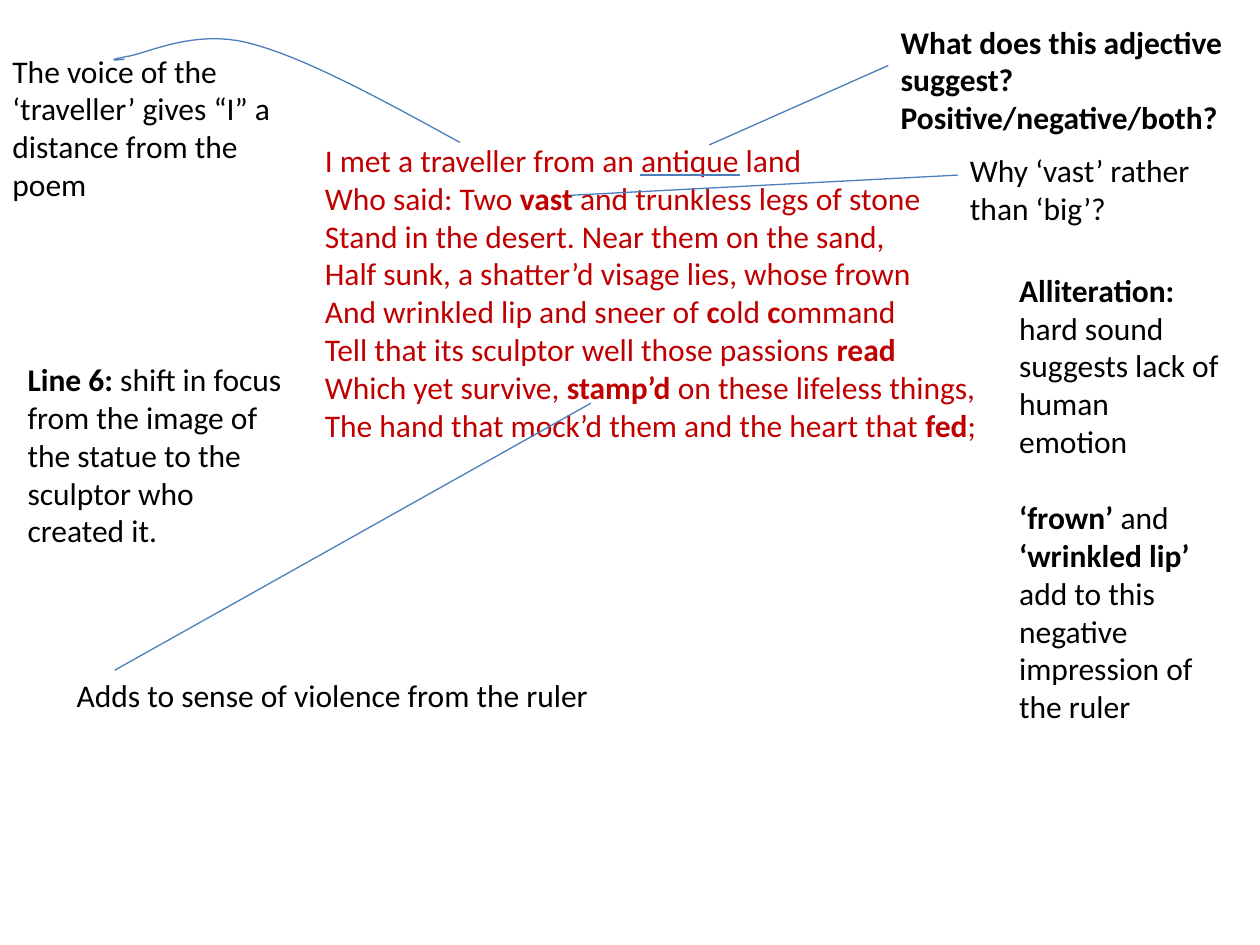
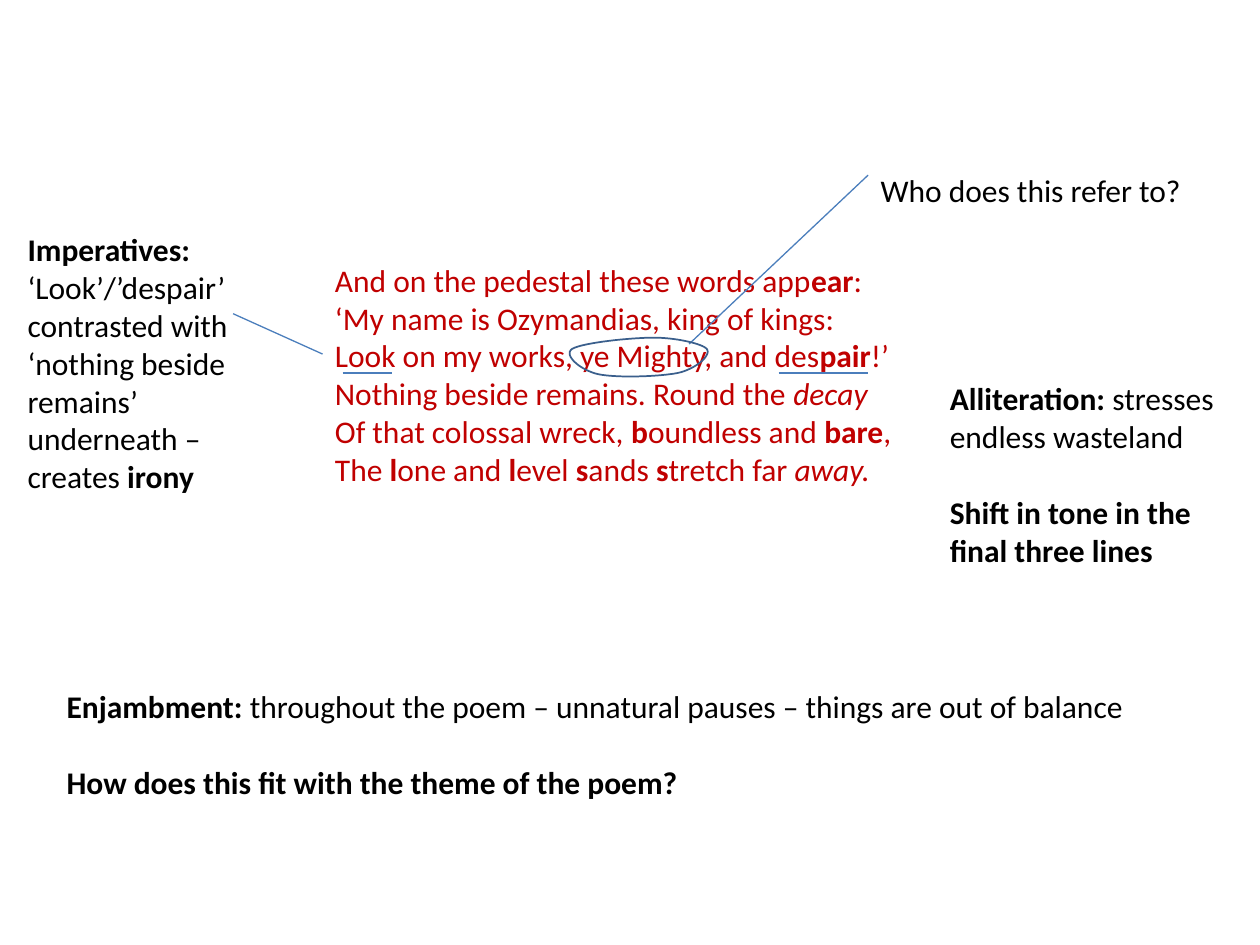
from dataclasses import dataclass

from lxml import etree
from pptx import Presentation
from pptx.dml.color import RGBColor
from pptx.enum.shapes import MSO_CONNECTOR
from pptx.enum.text import MSO_AUTO_SIZE
from pptx.oxml.ns import qn
from pptx.slide import Slide
from pptx.util import Emu, Pt

STRAIGHT = MSO_CONNECTOR.STRAIGHT
GROW = MSO_AUTO_SIZE.SHAPE_TO_FIT_TEXT

POEM_RED = RGBColor(0xC0, 0x00, 0x00)
NOTE_BLACK = RGBColor(0x00, 0x00, 0x00)
POINTER_BLUE = RGBColor(0x4B, 0x7E, 0xBC)
RING_BLUE = RGBColor(0x3A, 0x5F, 0x8C)

FONT = "Calibri"
TEXT_SIZE = Pt(18)
NOTE_GAP = Pt(22)
PX = 9144  # 100 px to the inch
CURVE_STEPS = 16

Point = tuple[float, float]


@dataclass(frozen=True)
class Passage:
    """Text whose *starred* parts are bold and _underscored_ parts italic."""
    left: int
    top: int
    width: int
    height: int
    paragraphs: tuple[str, ...]
    color: RGBColor = NOTE_BLACK
    wrap: bool = True
    gap: Pt = NOTE_GAP


@dataclass(frozen=True)
class Pointer:
    start: tuple[int, int]
    end: tuple[int, int]


@dataclass(frozen=True)
class Curve:
    """A start point followed by three points for each cubic segment."""
    points: tuple[tuple[int, int], ...]
    color: RGBColor = POINTER_BLUE
    weight: float = 0.75
    closed: bool = False


@dataclass(frozen=True)
class AnnotatedSlide:
    passages: tuple[Passage, ...]
    pointers: tuple[Pointer, ...]
    curve: Curve


def poem(left: int, top: int, width: int, height: int, *verses: str) -> Passage:
    return Passage(left, top, width, height, verses, POEM_RED, False, Pt(0))


OPENING = AnnotatedSlide(
    passages=(
        poem(248, 107, 543, 283,
             "I met a traveller from an antique land",
             "Who said: Two *vast* and trunkless legs of stone",
             "Stand in the desert. Near them on the sand,",
             "Half sunk, a shatter’d visage lies, whose frown",
             "And wrinkled lip and sneer of *c*old *c*ommand",
             "Tell that its sculptor well those passions *read*",
             "Which yet survive, *stamp’d* on these lifeless things,",
             "The hand that mock’d them and the heart that *fed*;"),
        Passage(705, 13, 276, 101,
                ("*What does this adjective suggest? Positive/negative/both?*",)),
        Passage(0, 36, 248, 131,
                ("The voice of the ‘traveller’ gives “I” a distance from the poem",)),
        Passage(760, 115, 220, 71, ("Why ‘vast’ rather than ‘big’?",)),
        Passage(799, 210, 181, 374,
                ("*Alliteration:* hard sound suggests lack of human emotion",
                 "*‘frown’ *and *‘wrinkled lip’* add to this negative "
                 "impression of the ruler")),
        Passage(12, 281, 228, 162,
                ("*Line 6:* shift in focus from the image of the statue "
                 "to the sculptor who created it.",)),
        Passage(51, 532, 431, 40,
                ("Adds to sense of violence from the ruler",), wrap=False),
    ),
    pointers=(
        Pointer((508, 139), (587, 139)),
        Pointer((563, 115), (705, 52)),
        Pointer((453, 155), (760, 139)),
        Pointer((469, 320), (91, 532)),
    ),
    curve=Curve(((365, 113), (303, 79), (241, 45), (197, 34), (153, 23),
                 (116, 43), (100, 45), (84, 48), (91, 48), (99, 47))),
)

ENDING = AnnotatedSlide(
    passages=(
        poem(256, 202, 465, 222,
             "And on the pedestal these words app*ear*:",
             "‘My name is Ozymandias, king of kings:",
             "Look on my works, ye Mighty, and des*pair*!’",
             "Nothing beside remains. Round the _decay_",
             "Of that colossal wreck, *b*oundless and *bare*,",
             "The *l*one and *l*evel *s*ands *s*tretch far _away._"),
        Passage(12, 178, 181, 222,
                ("*Imperatives: *‘Look’/’despair’ contrasted with ‘nothing "
                 "beside remains’ underneath – creates* irony*",)),
        Passage(744, 296, 244, 162,
                ("*Alliteration:* stresses endless wasteland",
                 "*Shift in tone in the final three lines*")),
        Passage(689, 131, 261, 40, ("Who does this refer to?",), wrap=False),
        Passage(43, 540, 869, 101,
                ("*Enjambment: *throughout the poem – unnatural pauses – "
                 "things are out of balance",
                 "*How does this fit with the theme of the poem?*"), wrap=False),
    ),
    pointers=(
        Pointer((272, 296), (311, 296)),
        Pointer((256, 281), (185, 249)),
        Pointer((618, 296), (689, 296)),
        Pointer((547, 273), (689, 139)),
    ),
    curve=Curve(((561, 277), (558, 273), (537, 268), (519, 268), (501, 268),
                 (462, 272), (454, 277), (447, 282), (461, 294), (475, 297),
                 (489, 300), (523, 299), (538, 296), (552, 293), (565, 282),
                 (561, 277)), RING_BLUE, 1, True),
)


def px(length: float) -> Emu:
    return Emu(round(length * PX))


def add_passage(slide: Slide, passage: Passage) -> None:
    box = slide.shapes.add_textbox(px(passage.left), px(passage.top),
                                   px(passage.width), px(passage.height))
    frame = box.text_frame
    frame.word_wrap = passage.wrap
    frame.auto_size = GROW
    for number, marked_text in enumerate(passage.paragraphs):
        paragraph = frame.add_paragraph() if number else frame.paragraphs[0]
        if number:
            paragraph.space_before = passage.gap
        for bold_index, stretch in enumerate(marked_text.split("*")):
            for italic_index, words in enumerate(stretch.split("_")):
                if not words:
                    continue
                run = paragraph.add_run()
                run.text = words
                run.font.name = FONT
                run.font.size = TEXT_SIZE
                run.font.color.rgb = passage.color
                run.font.bold = bold_index % 2 == 1
                run.font.italic = italic_index % 2 == 1


def add_pointer(slide: Slide, pointer: Pointer) -> None:
    line = slide.shapes.add_connector(
        STRAIGHT, *map(px, pointer.start + pointer.end))
    line.line.color.rgb = POINTER_BLUE
    line.line.width = Pt(0.75)
    etree.SubElement(line._element.spPr, qn("a:effectLst"))


def cubic_point(controls: tuple[tuple[int, int], ...], t: float) -> Point:
    weights = ((1 - t) ** 3, 3 * t * (1 - t) ** 2, 3 * t ** 2 * (1 - t), t ** 3)
    x, y = (sum(w * c for w, c in zip(weights, axis)) for axis in zip(*controls))
    return x, y


def add_curve(slide: Slide, curve: Curve) -> None:
    vertices = [cubic_point(curve.points[first:first + 4], step / CURVE_STEPS)
                for first in range(0, len(curve.points) - 1, 3)
                for step in range(1, CURVE_STEPS + 1)]
    builder = slide.shapes.build_freeform(*map(px, curve.points[0]))
    builder.add_line_segments([(px(x), px(y)) for x, y in vertices],
                              close=curve.closed)
    outline = builder.convert_to_shape()
    outline.shadow.inherit = False
    outline.fill.background()
    outline.line.color.rgb = curve.color
    outline.line.width = Pt(curve.weight)


def main() -> None:
    deck = Presentation()
    deck.slide_width, deck.slide_height = px(1000), px(750)
    blank_layout = deck.slide_layouts[6]
    for content in (OPENING, ENDING):
        slide = deck.slides.add_slide(blank_layout)
        for passage in content.passages:
            add_passage(slide, passage)
        for pointer in content.pointers:
            add_pointer(slide, pointer)
        add_curve(slide, content.curve)
    deck.save("out.pptx")


if __name__ == "__main__":
    main()
